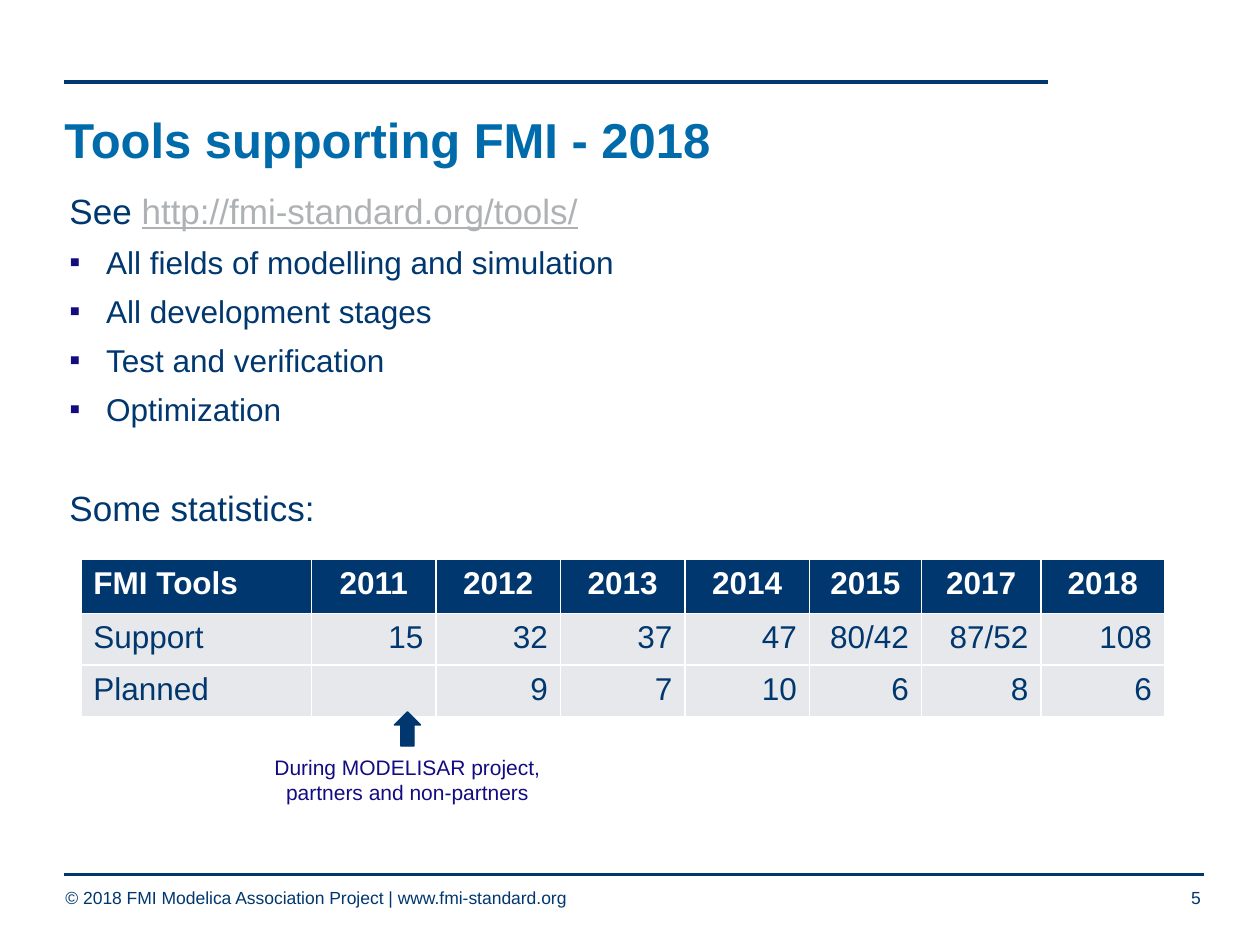
from lxml.etree import SubElement as Sub
from pptx import Presentation as Deck
from pptx.dml.color import RGBColor as Rgb
from pptx.enum.shapes import MSO_CONNECTOR as Link, MSO_SHAPE as Form
from pptx.enum.text import MSO_ANCHOR as Anchor, MSO_AUTO_SIZE as Fit, PP_ALIGN as Align
from pptx.oxml.ns import qn
from pptx.util import Cm, Pt

NAVY = Rgb(0x00, 0x37, 0x6F)
BLUE = Rgb(0x00, 0x6B, 0xAB)
VIOLET = Rgb(0x12, 0x0C, 0x80)
GREY = Rgb(0xAF, 0xB2, 0xB4)
PALE = Rgb(0xE7, 0xE8, 0xEB)
WHITE = Rgb(0xFF, 0xFF, 0xFF)

# text, size in points, space before in points, bullet
LINES = [
    ("See ", 20, 0, False),
    ("All fields of modelling and simulation", 18, 6.8, True),
    ("All development stages", 18, 6.4, True),
    ("Test and verification", 18, 6.4, True),
    ("Optimization", 18, 6.4, True),
    ("Some statistics:", 20, 33.5, False),
]
ROWS = [
    ["FMI Tools", "2011", "2012", "2013", "2014", "2015", "2017", "2018"],
    ["Support", "15", "32", "37", "47", "80/42", "87/52", "108"],
    ["Planned", "", "9", "7", "10", "6", "8", "6"],
]
WIDTHS = [4.65] + [2.51] * 4 + [2.26, 2.41, 2.49]
HEIGHTS = [1.09, 1.04, 1.04]


def put(item, **values):
    for name, value in values.items():
        setattr(item, name, value)


def place(shape, left, top, width, height):
    put(shape, left=Cm(left), top=Cm(top), width=Cm(width), height=Cm(height))


def add_run(para, text, size, tint, **more):
    run = para.add_run()
    run.text = text
    put(run.font, name="Arial", size=Pt(size), **more)
    run.font.color.rgb = tint


def clear_frame(shape, **values):
    """Drop the insets and the shrinking of a placeholder."""
    put(shape.text_frame, margin_left=0, margin_top=0, margin_right=0,
        margin_bottom=0, word_wrap=True, auto_size=Fit.NONE, **values)
    return shape.text_frame


def set_bullet(para, shown):
    props = para._p.get_or_add_pPr()
    indent = Cm(0.74) if shown else 0
    props.set("marL", str(indent))
    props.set("indent", str(-indent))
    if not shown:
        Sub(props, qn("a:buNone"))
        return
    tint = Sub(props, qn("a:buClr"))
    Sub(tint, qn("a:srgbClr"), val=str(VIOLET))
    Sub(props, qn("a:buFont"), typeface="Arial")
    Sub(props, qn("a:buChar"), char="▪")


def fill_title(shape):
    place(shape, 1.3, 1.96, 23.01, 1.8)
    para = clear_frame(shape, vertical_anchor=Anchor.MIDDLE).paragraphs[0]
    put(para, alignment=Align.LEFT, line_spacing=0.95)
    add_run(para, "Tools supporting FMI - 2018", 28, BLUE, bold=True)


def fill_body(shape):
    place(shape, 1.4, 3.81, 22.91, 13.74)
    frame = clear_frame(shape, vertical_anchor=Anchor.TOP)
    for num, (text, size, gap, shown) in enumerate(LINES):
        para = frame.add_paragraph() if num else frame.paragraphs[0]
        put(para, level=0 if text == LINES[-1][0] else 1,
            space_before=Pt(gap), space_after=Pt(0))
        set_bullet(para, shown)
        add_run(para, text, size, NAVY)
    add_run(frame.paragraphs[0], "http://fmi-standard.org/tools/", 20, GREY,
            underline=True)


def add_rule(slide, left, right, top):
    rule = slide.shapes.add_connector(Link.STRAIGHT, Cm(left), Cm(top),
                                      Cm(right), Cm(top))
    rule.line.color.rgb = NAVY
    rule.line.width = Pt(2)
    Sub(rule._element.spPr, qn("a:effectLst"))


def add_label(slide, box, lines, size, tint, align, wrap=False, **insets):
    shape = slide.shapes.add_textbox(*map(Cm, box))
    frame = shape.text_frame
    put(frame, word_wrap=wrap, auto_size=Fit.SHAPE_TO_FIT_TEXT, **insets)
    para = frame.paragraphs[0]
    para.alignment = align
    for num, text in enumerate(lines):
        if num:
            para.add_line_break()
        add_run(para, text, size, tint)


def add_stats(slide):
    grid = slide.shapes.add_table(len(ROWS), len(WIDTHS), Cm(1.63), Cm(11.28),
                                  Cm(sum(WIDTHS)), Cm(sum(HEIGHTS))).table
    grid.horz_banding = False
    for col, width in zip(grid.columns, WIDTHS):
        col.width = Cm(width)
    for row, height in zip(grid.rows, HEIGHTS):
        row.height = Cm(height)
    for y, texts in enumerate(ROWS):
        head = y == 0
        for x, text in enumerate(texts):
            cell = grid.cell(y, x)
            cell.fill.solid()
            cell.fill.fore_color.rgb = NAVY if head else PALE
            para = cell.text_frame.paragraphs[0]
            if x:
                para.alignment = Align.CENTER if head else Align.RIGHT
            if text:
                add_run(para, text, 18, WHITE if head else NAVY, bold=head)


def add_arrow(slide):
    box = map(Cm, (7.95, 14.35, 0.53, 0.69))
    arrow = slide.shapes.add_shape(Form.UP_ARROW, *box)
    arrow.shadow.inherit = False
    arrow.fill.solid()
    arrow.fill.fore_color.rgb = NAVY
    arrow.line.color.rgb = NAVY
    arrow.line.width = Pt(0.75)


def main():
    deck = Deck()
    put(deck, slide_width=Cm(25.4), slide_height=Cm(19.05))
    slide = deck.slides.add_slide(deck.slide_layouts[1])
    slim = {"margin_right": Cm(0.1)}
    add_label(slide, (1.07, 17.75, 10.59, 0.69),
              ["© 2018 FMI Modelica Association Project | www.fmi-standard.org"],
              10, NAVY, Align.LEFT, **slim)
    add_label(slide, (23.24, 17.75, 1.07, 0.69), ["5"], 10, NAVY, Align.RIGHT, **slim)
    add_rule(slide, 1.3, 24.28, 17.63)
    add_rule(slide, 1.3, 21.13, 1.65)
    fill_body(slide.placeholders[1])
    fill_title(slide.shapes.title)
    add_stats(slide)
    add_arrow(slide)
    add_label(slide, (4.42, 15.09, 7.59, 1.27),
              ["During MODELISAR project,", "partners and non-partners"],
              12, VIOLET, Align.CENTER, wrap=True)
    deck.save("out.pptx")


if __name__ == "__main__":
    main()
